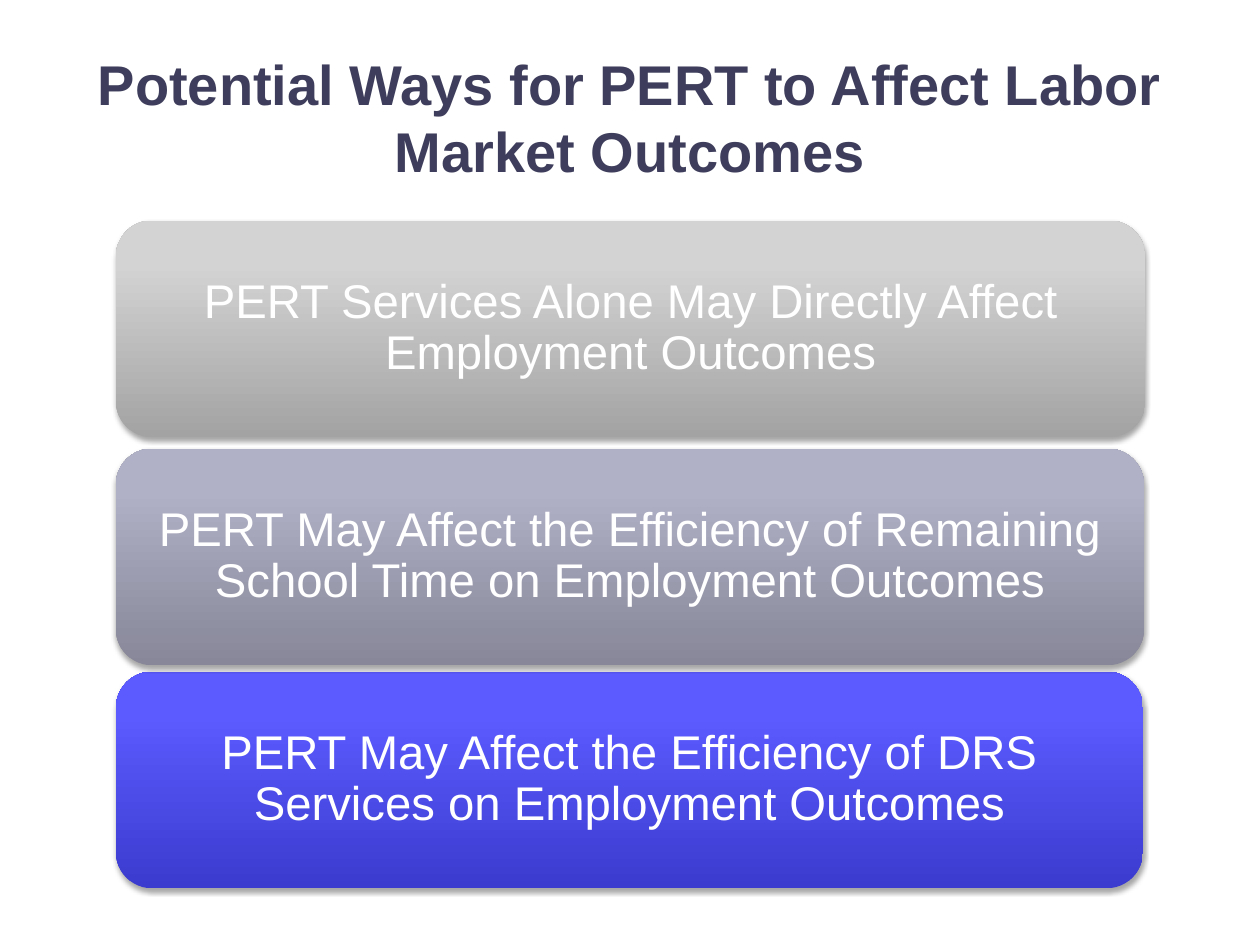
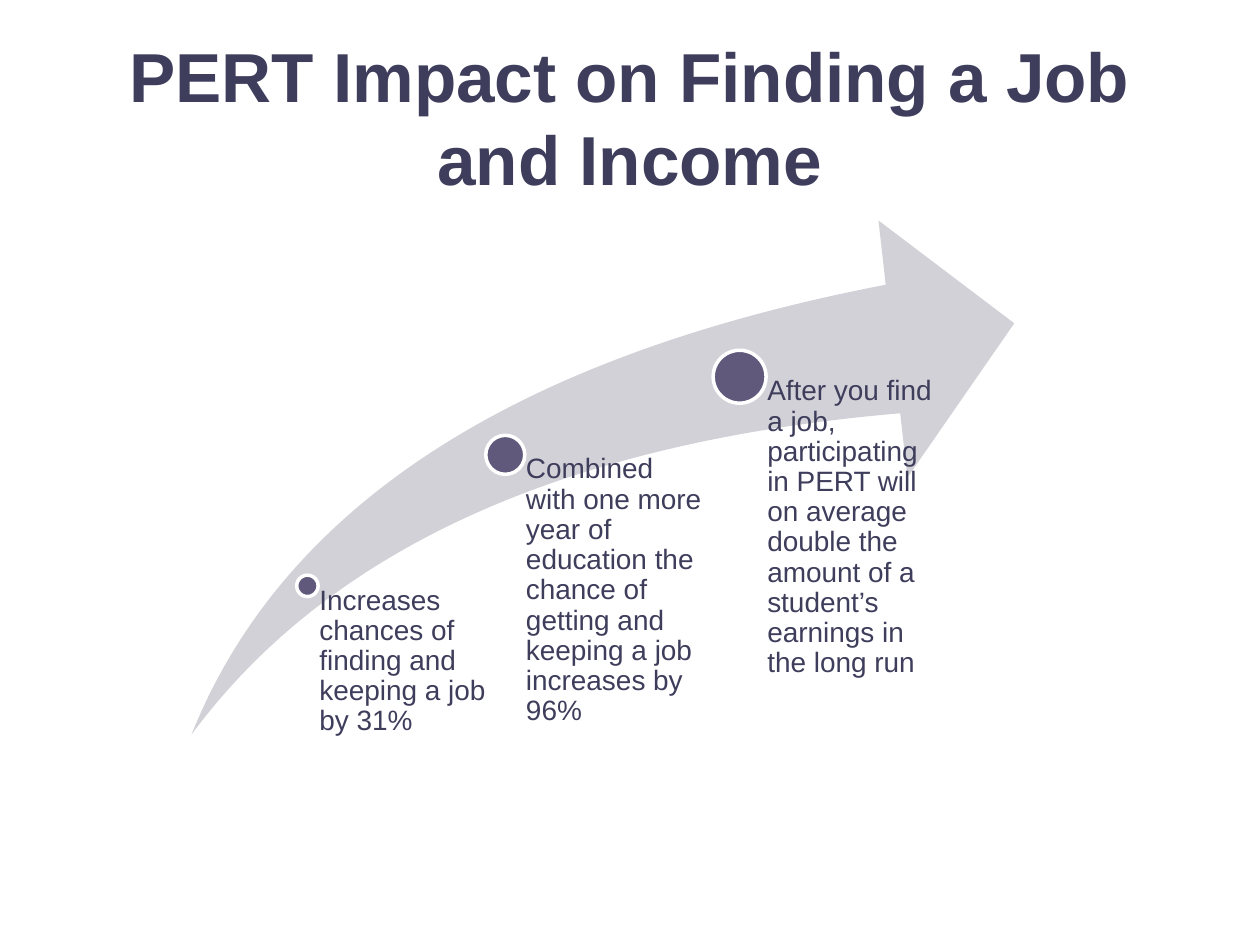
import copy
from dataclasses import dataclass

import lxml.etree
import pptx
import pptx.dml.color
import pptx.enum.shapes
import pptx.enum.text
import pptx.oxml.ns
import pptx.util

Inches = pptx.util.Inches
Pt = pptx.util.Pt
Shapes = pptx.enum.shapes.MSO_SHAPE
Align = pptx.enum.text.PP_ALIGN
Anchor = pptx.enum.text.MSO_ANCHOR
qualified = pptx.oxml.ns.qn


@dataclass(frozen=True)
class Theme:
    font: str = "Arial"
    ink: str = "3E3E5C"
    white: str = "FFFFFF"
    arrow: str = "D2D1D7"
    dot: str = "60597B"
    shadow: str = "000000"
    banner_size: float = 27
    milestone_size: float = 16
    line_spacing: float = 0.9


THEME = Theme()

BANNERS = [
    (5.33, 8.15, ("3B3BCF", "5B5BFF", "5D5DFF"),
     "PERT May Affect the Efficiency of DRS Services on Employment Outcomes"),
    (3.56, 8.16, ("878799", "B0B0C6", "B0B0C8"),
     "PERT May Affect the Efficiency of Remaining School Time on Employment Outcomes"),
    (1.75, 8.17, ("A3A3A3", "D3D3D3", "D4D4D4"),
     "PERT Services Alone May Directly Affect Employment Outcomes"),
]

MILESTONES = [
    (2.44, 4.65, 0.17, 1.52, "Increases chances of finding and keeping a job by 31%"),
    (4.01, 3.61, 0.31, 1.57,
     "Combined with one more year of education the chance of getting and keeping "
     "a job increases by 96%"),
    (5.87, 2.99, 0.42, 1.57,
     "After you find a job, participating in PERT will on average double the amount "
     "of a student’s earnings in the long run"),
]
ARROW_BOTTOM = 5.83


def rgb(value):
    return pptx.dml.color.RGBColor.from_string(value)


def write(frame, text, size, color, align, anchor, margins, bold=False, spacing=None):
    frame.word_wrap = True
    frame.auto_size = pptx.enum.text.MSO_AUTO_SIZE.NONE
    frame.vertical_anchor = anchor
    frame.margin_left, frame.margin_top, frame.margin_right, frame.margin_bottom = map(
        Inches, margins)
    frame.text = text
    para = frame.paragraphs[0]
    para.alignment = align
    para.line_spacing = spacing
    para.font.name = THEME.font
    para.font.size = Pt(size)
    para.font.bold = bold
    para.font.color.rgb = rgb(color)


def add_page(deck, title, size):
    page = deck.slides.add_slide(deck.slide_layouts[5])
    box = page.shapes.title
    box.left, box.top, box.width, box.height = map(Inches, (0.5, 0.3, 9, 1.25))
    write(box.text_frame, title, size, THEME.ink, Align.CENTER, Anchor.MIDDLE,
          (0.1, 0.05, 0.1, 0.05), bold=True)
    return page


def add_plain_shape(page, kind, left, top, width, height, color):
    shape = page.shapes.add_shape(kind, *map(Inches, (left, top, width, height)))
    shape.shadow.inherit = False
    shape.fill.solid()
    shape.fill.fore_color.rgb = rgb(color)
    shape.line.fill.background()
    return shape


def fill_gradient(shape, colors):
    shape.fill.gradient()
    shape.fill.gradient_angle = 90
    stop_list = shape._element.spPr.find(".//" + qualified("a:gsLst"))
    stop_list.append(copy.deepcopy(stop_list[-1]))
    for stop, color, position in zip(shape.fill.gradient_stops, colors, (0, 0.8, 1)):
        stop.color.rgb = rgb(color)
        stop.position = position


def add_shadow(shape):
    effects = shape._element.spPr.find(qualified("a:effectLst"))
    shadow = lxml.etree.SubElement(
        effects, qualified("a:outerShdw"), blurRad=str(Pt(3.1)), dist=str(Pt(1.8)),
        dir="5400000", rotWithShape="0")
    color = lxml.etree.SubElement(shadow, qualified("a:srgbClr"), val=THEME.shadow)
    lxml.etree.SubElement(color, qualified("a:alpha"), val="35000")


def add_banner(page, top, width, colors, text):
    banner = add_plain_shape(page, Shapes.ROUNDED_RECTANGLE, 0.92, top, width, 1.72, colors[0])
    fill_gradient(banner, colors)
    add_shadow(banner)
    write(banner.text_frame, text, THEME.banner_size, THEME.white, Align.CENTER,
          Anchor.MIDDLE, (0.03, 0, 0.03, 0), spacing=THEME.line_spacing)


def add_milestone(page, center_x, center_y, diameter, width, text):
    radius = diameter / 2
    dot = add_plain_shape(page, Shapes.OVAL, center_x - radius, center_y - radius,
                          diameter, diameter, THEME.dot)
    dot.line.color.rgb = rgb(THEME.white)
    dot.line.width = Pt(2)
    box = page.shapes.add_textbox(
        *map(Inches, (center_x, center_y, width, ARROW_BOTTOM - center_y)))
    write(box.text_frame, text, THEME.milestone_size, THEME.ink, Align.LEFT, Anchor.TOP,
          (radius + 0.01, 0, 0, 0), spacing=THEME.line_spacing)


def main():
    deck = pptx.Presentation()
    deck.slide_width = Inches(10)
    deck.slide_height = Inches(7.5)

    page = add_page(deck, "Potential Ways for PERT to Affect Labor Market Outcomes", 32)
    for banner in BANNERS:
        add_banner(page, *banner)

    page = add_page(deck, "PERT Impact on Finding a Job and Income", 39.6)
    arrow = add_plain_shape(page, Shapes.SWOOSH_ARROW, 1.52, 1.75, 6.53, 4.08, THEME.arrow)
    arrow.adjustments[0] = 0.25
    arrow.adjustments[1] = 0.25
    for milestone in MILESTONES:
        add_milestone(page, *milestone)

    deck.save("out.pptx")


if __name__ == "__main__":
    main()
